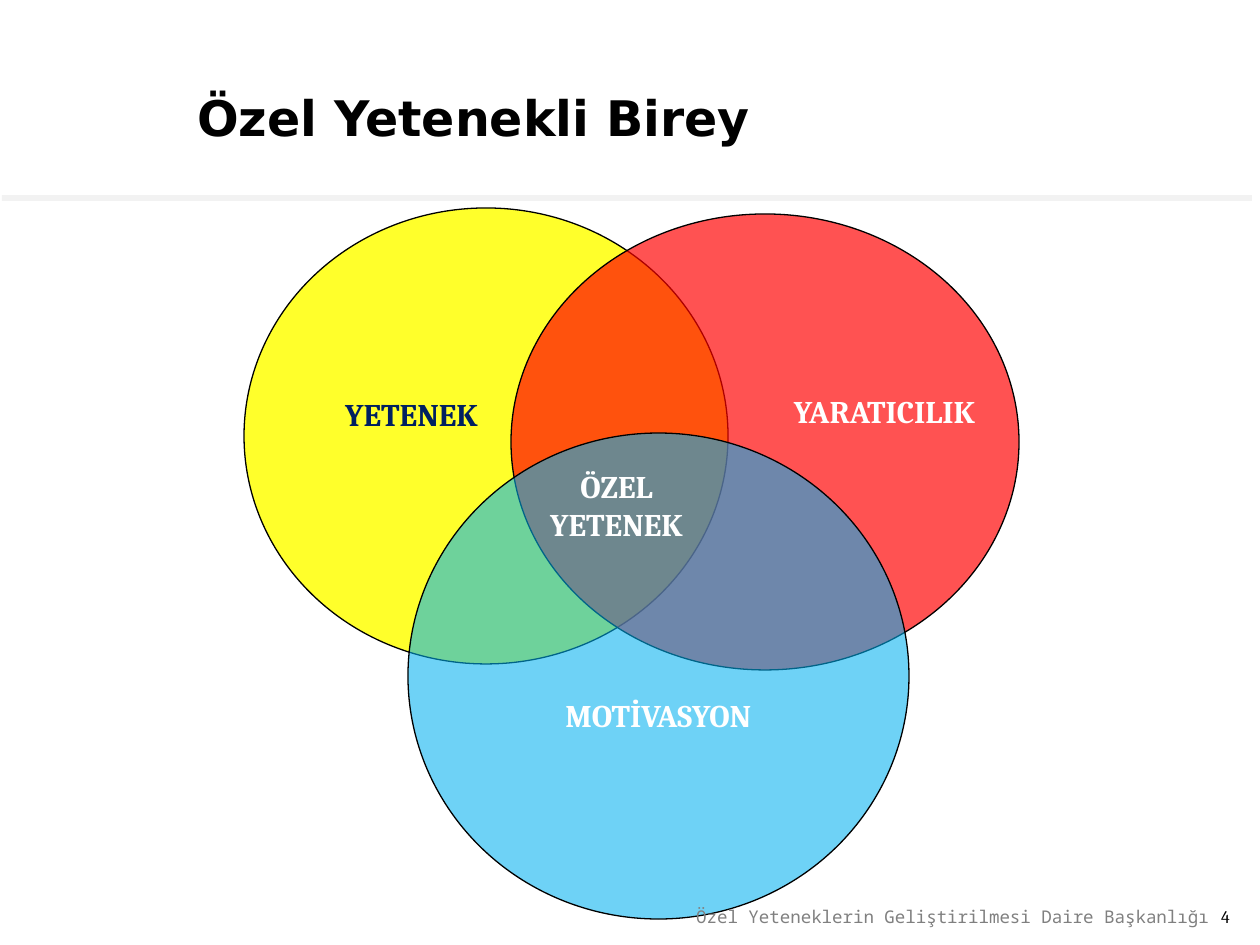
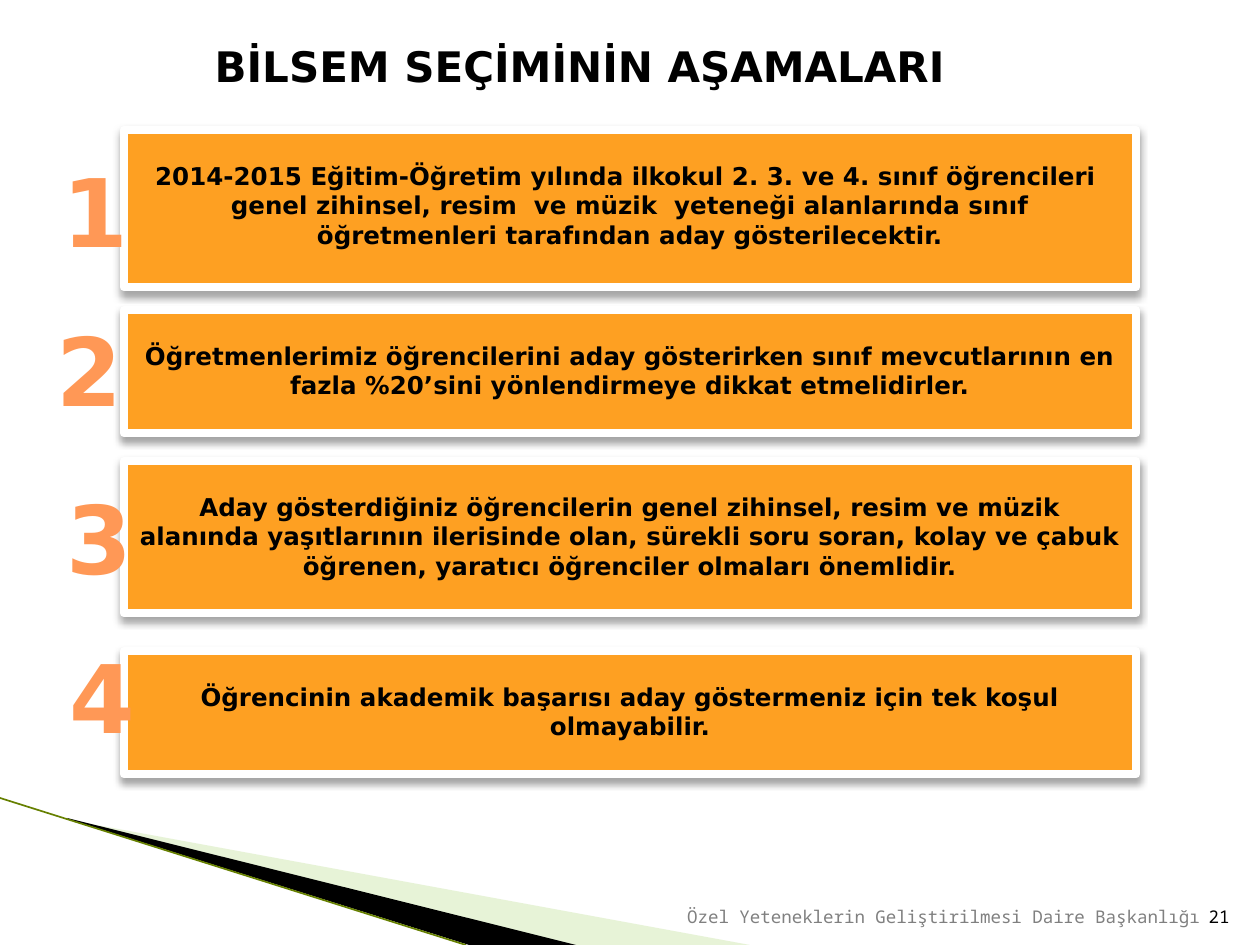
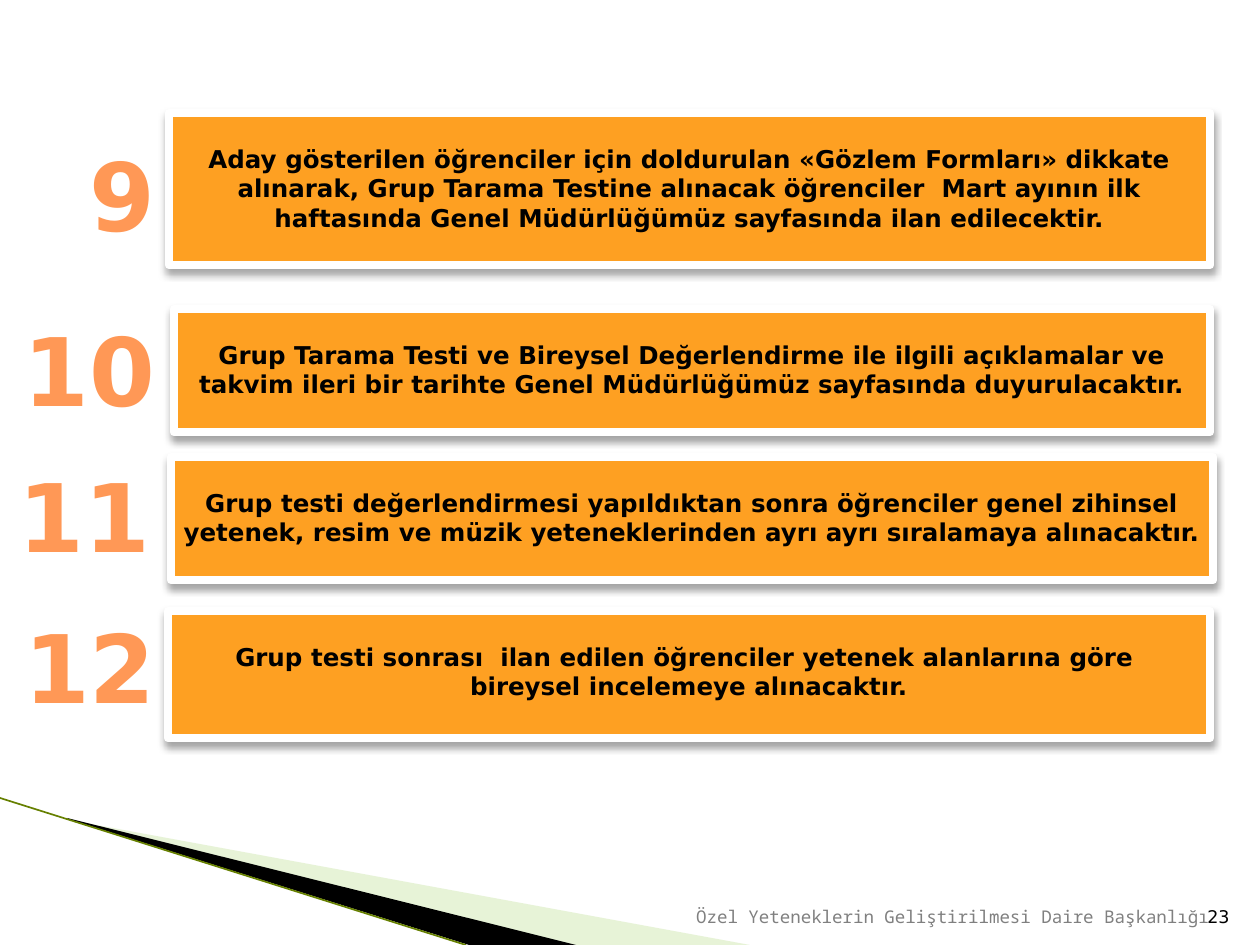
"""Build three slides about gifted pupils and the stages of their selection."""
from lxml.etree import SubElement
from pptx import Presentation
from pptx.dml.color import RGBColor
from pptx.enum.shapes import MSO_CONNECTOR, MSO_SHAPE as SHAPE
from pptx.enum.text import MSO_ANCHOR as ANCHOR, PP_ALIGN as ALIGN
from pptx.oxml.ns import qn
from pptx.util import Pt

PX = 914400 / 126
WHITE = RGBColor(0xFF, 0xFF, 0xFF)
BLACK = RGBColor(0x00, 0x00, 0x00)
NAVY = RGBColor(0x00, 0x20, 0x60)
YELLOW = RGBColor(0xFF, 0xFF, 0x00)
RED = RGBColor(0xFF, 0x00, 0x00)
BLUE = RGBColor(0x00, 0xB0, 0xF0)
ORANGE = RGBColor(0xFE, 0xA0, 0x22)
PEACH = RGBColor(0xFF, 0x98, 0x56)
GRAY = RGBColor(0x80, 0x80, 0x80)
PALE_GRAY = RGBColor(0xF2, 0xF2, 0xF2)
PALE_GREEN = RGBColor(0xC3, 0xE1, 0x9D)
OLIVE = RGBColor(0x66, 0x80, 0x00)
SANS, SERIF, MONO = "DejaVu Sans", "Cambria", "Noto Sans Mono"
FOOTER = "Özel Yeteneklerin Geliştirilmesi Daire Başkanlığı"


def write(sp, text, size=14, font=SANS, color=BLACK, bold=True, align=ALIGN.CENTER,
          anchor=ANCHOR.TOP, wrap=True, top=6):
    tf = sp.text_frame
    tf.word_wrap = wrap
    tf.vertical_anchor = anchor
    tf.margin_top = int(top * PX)
    for i, line in enumerate(text.split("\n")):
        p = tf.add_paragraph() if i else tf.paragraphs[0]
        p.alignment = align
        r = p.add_run()
        r.text = line
        r.font.size, r.font.name, r.font.bold = Pt(size), font, bold
        r.font.color.rgb = color


def paint(sp, fill, alpha=100, line=None, width=0.75):
    sp.shadow.inherit = False
    sp.fill.solid()
    sp.fill.fore_color.rgb = fill
    if alpha < 100:
        clr = sp._element.spPr.find(qn("a:solidFill"))[0]
        SubElement(clr, qn("a:alpha"), val=str(alpha * 1000))
    if line is None:
        sp.line.fill.background()
    else:
        sp.line.color.rgb = line
        sp.line.width = Pt(width)


prs = Presentation()
prs.slide_width, prs.slide_height = int(1260 * PX), int(945 * PX)
slides = [prs.slides.add_slide(prs.slide_layouts[6]) for _ in range(3)]
venn, first_stages, last_stages = slides

circles = [
    (244, 208, 484, 456, YELLOW, 83),
    (511, 214, 508, 456, RED, 68),
    (408, 433, 501, 486, BLUE, 57),
]
for x, y, w, h, color, alpha in circles:
    sp = venn.shapes.add_shape(SHAPE.OVAL, *[int(v * PX) for v in (x, y, w, h)])
    paint(sp, color, alpha, BLACK)

labels = [
    (315, 389, 193, 50, "YETENEK", NAVY),
    (756, 386, 257, 50, "YARATICILIK", WHITE),
    (526, 690, 265, 50, "MOTİVASYON", WHITE),
    (520, 461, 193, 89, "ÖZEL\nYETENEK", WHITE),
]
for x, y, w, h, text, color in labels:
    sp = venn.shapes.add_textbox(*[int(v * PX) for v in (x, y, w, h)])
    write(sp, text, size=18, font=SERIF, color=color, wrap=False)

sp = venn.shapes.add_shape(SHAPE.RECTANGLE, *[int(v * PX) for v in (2, 195, 1250, 6)])
paint(sp, PALE_GRAY)

titles = [
    (venn, (185, 38, 1134, 158), "Özel Yetenekli Birey", 28, ALIGN.LEFT, ANCHOR.MIDDLE),
    (first_stages, (98, 35, 963, 64), "BİLSEM SEÇİMİNİN AŞAMALARI", 24, ALIGN.CENTER, ANCHOR.TOP),
]
for s, box, text, size, align, anchor in titles:
    sp = s.shapes.add_textbox(*[int(v * PX) for v in box])
    write(sp, text, size=size, align=align, anchor=anchor)

wedges = [
    ([(69, 820), (750, 945), (575, 945), (69, 819)], PALE_GREEN, 40),
    ([(67, 818), (576, 945), (469, 945), (68, 819)], BLACK, 100),
]
for s in (first_stages, last_stages):
    for points, color, alpha in wedges:
        outline = s.shapes.build_freeform(*points[0], scale=PX)
        outline.add_line_segments(points[1:])
        paint(outline.convert_to_shape(), color, alpha)
    edge = s.shapes.add_connector(MSO_CONNECTOR.STRAIGHT, *[int(v * PX) for v in (0, 798, 466, 945)])
    edge.line.color.rgb = OLIVE
    edge.line.width = Pt(0.95)
    SubElement(edge._element.spPr, qn("a:effectLst"))

stages = [
    (first_stages, (124, 130, 1012, 157), "1", (50, 147, 48),
     "2014-2015 Eğitim-Öğretim yılında ilkokul 2. 3. ve 4. sınıf öğrencileri  genel zihinsel, "
     "resim  ve müzik  yeteneği alanlarında sınıf öğretmenleri tarafından aday gösterilecektir."),
    (first_stages, (124, 310, 1012, 123), "2", (44, 306, 48),
     "Öğretmenlerimiz öğrencilerini aday gösterirken sınıf mevcutlarının en fazla %20’sini "
     "yönlendirmeye dikkat etmelidirler."),
    (first_stages, (124, 461, 1012, 152), "3", (54, 474, 48),
     "Aday gösterdiğiniz öğrencilerin genel zihinsel, resim ve müzik alanında yaşıtlarının "
     "ilerisinde olan, sürekli soru soran, kolay ve çabuk öğrenen, yaratıcı öğrenciler "
     "olmaları önemlidir."),
    (first_stages, (124, 651, 1012, 123), "4", (57, 633, 48),
     "Öğrencinin akademik başarısı aday göstermeniz için tek koşul olmayabilir."),
    (last_stages, (169, 113, 1041, 152), "9", (77, 131, 48),
     "Aday gösterilen öğrenciler için doldurulan «Gözlem Formları» dikkate alınarak, Grup "
     "Tarama Testine alınacak öğrenciler  Mart ayının ilk haftasında Genel Müdürlüğümüz "
     "sayfasında ilan edilecektir."),
    (last_stages, (174, 309, 1036, 123), "10", (5, 306, 169),
     "Grup Tarama Testi ve Bireysel Değerlendirme ile ilgili açıklamalar ve takvim ileri bir "
     "tarihte Genel Müdürlüğümüz sayfasında duyurulacaktır."),
    (last_stages, (171, 457, 1042, 123), "11", (-5, 452, 179),
     "Grup testi değerlendirmesi yapıldıktan sonra öğrenciler genel zihinsel yetenek, resim "
     "ve müzik yeteneklerinden ayrı ayrı sıralamaya alınacaktır."),
    (last_stages, (168, 611, 1042, 127), "12", (-14, 603, 208),
     "Grup testi sonrası  ilan edilen öğrenciler yetenek alanlarına göre  bireysel "
     "incelemeye alınacaktır."),
]
for s, card, number, (x, y, w), text in stages:
    sp = s.shapes.add_shape(SHAPE.RECTANGLE, *[int(v * PX) for v in card])
    paint(sp, ORANGE, line=WHITE, width=5)
    shadow = SubElement(sp._element.spPr.find(qn("a:effectLst")), qn("a:outerShdw"),
                        blurRad=str(Pt(4)), dist=str(Pt(3)), dir="5400000", rotWithShape="0")
    clr = SubElement(shadow, qn("a:srgbClr"), val=str(BLACK))
    SubElement(clr, qn("a:alpha"), val="35000")
    write(sp, text, top=31)
    sp = s.shapes.add_textbox(*[int(v * PX) for v in (x, y, w, 127)])
    write(sp, number, size=54, color=PEACH)

footers = [(venn, 669, "4", SERIF), (first_stages, 660, "21", MONO), (last_stages, 669, "23", SANS)]
for s, left, number, font in footers:
    for x, w, text, face, color in ((left, 552, FOOTER, MONO, GRAY), (1192, 50, number, font, BLACK)):
        sp = s.shapes.add_textbox(*[int(v * PX) for v in (x, 883, w, 50)])
        write(sp, text, size=10, font=face, color=color, bold=False,
              align=ALIGN.RIGHT, anchor=ANCHOR.BOTTOM)

prs.save("out.pptx")
